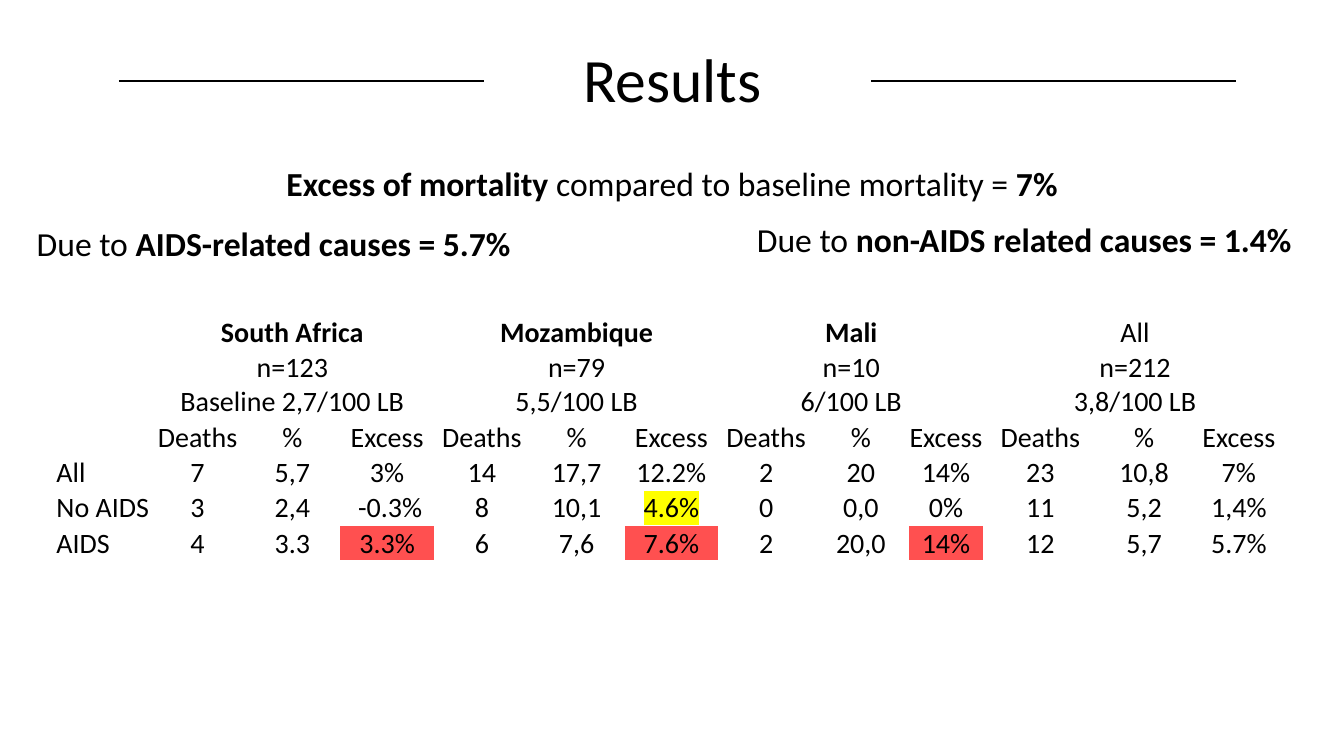
from dataclasses import dataclass

from lxml.etree import SubElement
from pptx import Presentation
from pptx.dml.color import RGBColor
from pptx.enum.shapes import MSO_CONNECTOR
from pptx.enum.text import MSO_ANCHOR, MSO_AUTO_SIZE, PP_ALIGN
from pptx.oxml import parse_xml
from pptx.oxml.ns import nsdecls, qn
from pptx.util import Inches, Pt

TITLE = "Results"
FINDINGS = [  # runs as (text, bold), then left, top, width, wrap
    ([("Excess of mortality ", True), ("compared to baseline mortality = ", False),
      ("7%", True)], 2.71, 1.57, 7.91, False),
    ([("Due to ", False), ("AIDS-related causes = 5.7%", True)], 0.1, 2.16, 5.23, True),
    ([("Due to ", False), ("non-AIDS related causes = 1.4%", True)], 7.38, 2.12, 5.56, True),
]
COUNTRIES = [  # name, bold, sample and baseline
    ("South Africa", True, ["n=123", "Baseline 2,7/100 LB"]),
    ("Mozambique", True, ["n=79", "5,5/100 LB"]),
    ("Mali", True, ["n=10", "6/100 LB"]),
    ("All", False, ["n=212", "3,8/100 LB"]),
]
MEASURES = ["Deaths", "%", "Excess"]
CAUSES = [
    ["All", "7", "5,7", "3%", "14", "17,7", "12.2%", "2", "20", "14%", "23", "10,8", "7%"],
    ["No AIDS", "3", "2,4", " -0.3%", "8", "10,1", "4.6%", "0", "0,0", "0%", "11", "5,2", "1,4%"],
    ["AIDS", "4", "3.3", "3.3%", "6", "7,6", "7.6%", "2", "20,0", "14%", "12", "5,7", "5.7%"],
]
RED_CELLS = {(5, 3), (5, 6), (5, 9)}
HIGHLIGHTED = {(4, 6)}
MIDDLE_CELLS = {(0, 10), (4, 9), (5, 9)}

COLUMN, ROW = 0.94, 0.22
COLUMN_EXCEPTIONS = {9: 0.75, 10: 1.12}
TABLE_LEFT, TABLE_TOP = 0.55, 3.12
RULE_Y, RULE_LENGTH, RULE_STARTS = 0.8, 3.62, (1.18, 8.64)


@dataclass(frozen=True)
class Theme:
    font: str = "Calibri"
    ink: str = "000000"
    paper: str = "FFFFFF"
    alert: str = "FF5050"
    marker: str = "FFFF00"
    title: int = 44
    finding: int = 24
    cell: int = 20


THEME = Theme()


def write(paragraph, text, size, bold=False, align=PP_ALIGN.CENTER, highlight=None):
    paragraph.alignment = align
    run = paragraph.add_run()
    run.text = text
    font = run.font
    font.name, font.size, font.bold = THEME.font, Pt(size), bold
    font.color.rgb = RGBColor.from_string(THEME.ink)
    if highlight:
        mark = parse_xml(f'<a:highlight {nsdecls("a")}><a:srgbClr val="{highlight}"/></a:highlight>')
        run.font._element.find(qn("a:solidFill")).addnext(mark)


def add_title(slide):
    title = slide.shapes.title
    title.left, title.top, title.width, title.height = map(Inches, (0.92, 0.09, 11.5, 1.45))
    title.text_frame.vertical_anchor = MSO_ANCHOR.MIDDLE
    heading = title.text_frame.paragraphs[0]
    heading.line_spacing = 0.9
    write(heading, TITLE, THEME.title)


def add_rule(slide, start):
    y = Inches(RULE_Y)
    rule = slide.shapes.add_connector(
        MSO_CONNECTOR.STRAIGHT, Inches(start), y, Inches(start + RULE_LENGTH), y)
    rule.line.color.rgb = RGBColor.from_string(THEME.ink)
    rule.line.width = Pt(1.5)
    SubElement(rule._element.spPr, qn("a:effectLst"))


def add_finding(slide, runs, left, top, width, wrap):
    box = slide.shapes.add_textbox(*map(Inches, (left, top, width, 0.5)))
    frame = box.text_frame
    frame.word_wrap = wrap
    frame.auto_size = MSO_AUTO_SIZE.SHAPE_TO_FIT_TEXT
    for text, bold in runs:
        write(frame.paragraphs[0], text, THEME.finding, bold=bold)


def prepare_cell(cell, position):
    """Set margins, anchor, borders and fill, and keep empty cells at text height."""
    cell.margin_left = cell.margin_right = cell.margin_top = Inches(0.01)
    cell.margin_bottom = 0
    cell.vertical_anchor = MSO_ANCHOR.MIDDLE if position in MIDDLE_CELLS else MSO_ANCHOR.BOTTOM
    properties = cell._tc.get_or_add_tcPr()
    for side in "LRTB":
        properties.append(parse_xml(
            f'<a:ln{side} {nsdecls("a")} w="{Pt(1)}"><a:solidFill>'
            f'<a:srgbClr val="{THEME.paper}"/></a:solidFill></a:ln{side}>'))
    if position in RED_CELLS:
        cell.fill.solid()
        cell.fill.fore_color.rgb = RGBColor.from_string(THEME.alert)
    else:
        cell.fill.background()
    SubElement(cell.text_frame.paragraphs[0]._p, qn("a:endParaRPr"), sz=str(THEME.cell * 100))


def fill_cell(cell, lines, **style):
    frame = cell.text_frame
    for index, line in enumerate(lines):
        paragraph = frame.add_paragraph() if index else frame.paragraphs[0]
        write(paragraph, line, THEME.cell, **style)


def add_mortality_table(slide):
    span = len(MEASURES)
    body = [[""] + MEASURES * len(COUNTRIES)] + CAUSES
    row_count, column_count = len(body) + 2, len(body[0])
    widths = [COLUMN_EXCEPTIONS.get(column, COLUMN) for column in range(column_count)]
    table = slide.shapes.add_table(
        row_count, column_count, Inches(TABLE_LEFT), Inches(TABLE_TOP),
        Inches(sum(widths)), Inches(ROW * row_count)).table
    table.first_row = table.horz_banding = False
    for column, width in zip(table.columns, widths):
        column.width = Inches(width)
    for row_index, row in enumerate(table.rows):
        row.height = Inches(ROW)
        for column_index, cell in enumerate(row.cells):
            prepare_cell(cell, (row_index, column_index))

    for index, (country, bold, sample) in enumerate(COUNTRIES):
        first = 1 + index * span
        for row_index, lines, weight in ((0, [country], bold), (1, sample, False)):
            cell = table.cell(row_index, first)
            cell.merge(table.cell(row_index, first + span - 1))
            fill_cell(cell, lines, bold=weight)

    for row_index, values in enumerate(body, start=2):
        for column_index, value in enumerate(values):
            if value:
                fill_cell(
                    table.cell(row_index, column_index), [value],
                    align=PP_ALIGN.CENTER if column_index else PP_ALIGN.LEFT,
                    highlight=THEME.marker if (row_index, column_index) in HIGHLIGHTED else None)


def main():
    deck = Presentation()
    deck.slide_width, deck.slide_height = Inches(13.33), Inches(7.5)
    slide = deck.slides.add_slide(deck.slide_layouts.get_by_name("Title Only"))
    add_mortality_table(slide)
    add_title(slide)
    for start in RULE_STARTS:
        add_rule(slide, start)
    for finding in FINDINGS:
        add_finding(slide, *finding)
    deck.save("out.pptx")


if __name__ == "__main__":
    main()
